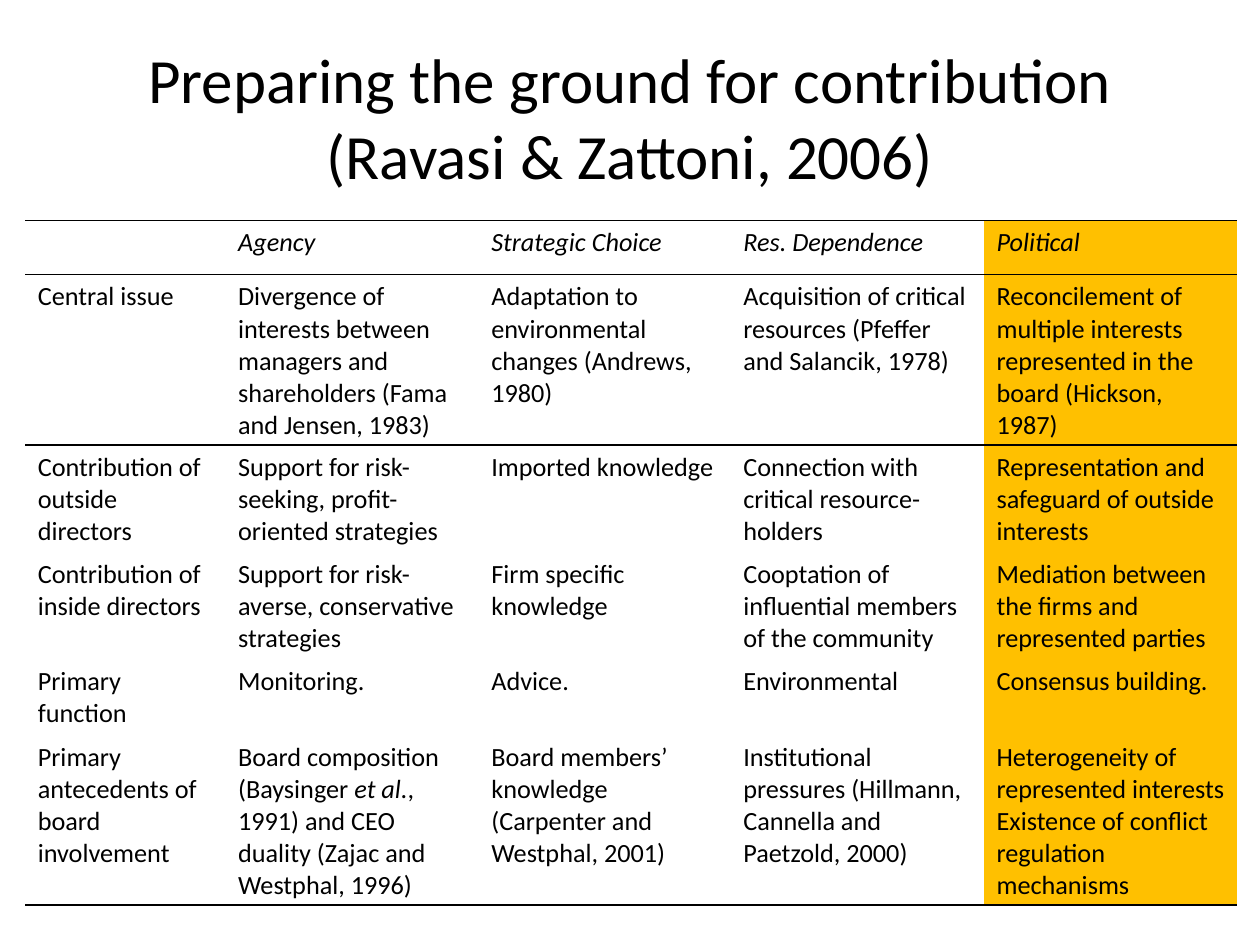
"""Build the slide comparing four theories of board contribution."""
from lxml import etree
from pptx import Presentation
from pptx.dml.color import RGBColor
from pptx.enum import text
from pptx.oxml import ns
from pptx.util import Inches, Pt

BLACK = RGBColor(0x00, 0x00, 0x00)
AMBER = RGBColor(0xFF, 0xC0, 0x00)
FONT = "Calibri"
NO_STYLE_NO_GRID = "{2D5ABB26-0587-4C30-8999-92F81FD0307C}"

COLUMN_WIDTHS = [1.59, 2.01, 2, 2.01, 2.01]
ROW_HEIGHTS = [0.43, 1.33, 0.84, 0.84, 0.59, 1.33]
# Asterisks enclose italic words; a line feed starts a new paragraph.
THEORIES = [
    ["", "*Agency*", "*Strategic Choice*", "*Res. Dependence*", "*Political*"],
    ["Central issue",
     "Divergence of interests between managers and shareholders (Fama and Jensen, 1983)",
     "Adaptation to environmental changes (Andrews, 1980)",
     "Acquisition of critical resources (Pfeffer and Salancik, 1978)",
     "Reconcilement of multiple interests represented in the board (Hickson, 1987)"],
    ["Contribution of outside directors",
     "Support for risk-seeking, profit-oriented strategies",
     "Imported knowledge",
     "Connection with critical resource-holders",
     "Representation and safeguard of outside interests"],
    ["Contribution of inside directors",
     "Support for risk-averse, conservative strategies",
     "Firm specific knowledge",
     "Cooptation of influential members of the community",
     "Mediation between the firms and represented parties"],
    ["Primary function", "Monitoring.", "Advice.", "Environmental", "Consensus building."],
    ["Primary antecedents of board involvement",
     "Board composition (Baysinger *et al.*, 1991) and CEO duality (Zajac and Westphal, 1996)",
     "Board members’ knowledge (Carpenter and Westphal, 2001)",
     "Institutional pressures (Hillmann, Cannella and Paetzold, 2000)",
     "Heterogeneity of represented interests\nExistence of conflict regulation mechanisms"],
]


def add_run(paragraph, words, size, italic=False):
    run = paragraph.add_run()
    run.text = words
    run.font.name = FONT
    run.font.size = Pt(size)
    run.font.italic = italic
    run.font.color.rgb = BLACK


def add_border(cell, side, position):
    line = etree.Element(ns.qn(f"a:ln{side}"), w=str(Pt(1)))
    fill = etree.SubElement(line, ns.qn("a:solidFill"))
    etree.SubElement(fill, ns.qn("a:srgbClr"), val=str(BLACK))
    cell._tc.get_or_add_tcPr().insert(position, line)


deck = Presentation()
deck.slide_width, deck.slide_height = Inches(10), Inches(7.5)
slide = deck.slides.add_slide(deck.slide_layouts[6])

title = slide.shapes.add_textbox(Inches(0.5), Inches(0.3), Inches(9), Inches(1.25)).text_frame
title.word_wrap = True
title.vertical_anchor = text.MSO_ANCHOR.MIDDLE
heading = title.paragraphs[0]
heading.alignment = text.PP_ALIGN.CENTER
add_run(heading, "Preparing the ground for contribution (Ravasi & Zattoni, 2006)", 36)

comparison = slide.shapes.add_table(
    len(ROW_HEIGHTS), len(COLUMN_WIDTHS), Inches(0.2), Inches(1.75),
    Inches(sum(COLUMN_WIDTHS)), Inches(sum(ROW_HEIGHTS))).table
comparison.first_row = comparison.horz_banding = False
comparison._tbl.tblPr.find(ns.qn("a:tableStyleId")).text = NO_STYLE_NO_GRID
for column, width in zip(comparison.columns, COLUMN_WIDTHS):
    column.width = Inches(width)
for row, height in zip(comparison.rows, ROW_HEIGHTS):
    row.height = Inches(height)

last_row = len(THEORIES) - 1
political = len(COLUMN_WIDTHS) - 1
for r, aspects in enumerate(THEORIES):
    for c, aspect in enumerate(aspects):
        cell = comparison.cell(r, c)
        if c == political:
            cell.fill.solid()
            cell.fill.fore_color.rgb = AMBER
        else:
            cell.fill.background()
        if r in (0, last_row):
            add_border(cell, "B", 0)
        if r in (0, 1):
            add_border(cell, "T", 0)
        for n, statement in enumerate(aspect.split("\n")):
            paragraph = cell.text_frame.add_paragraph() if n else cell.text_frame.paragraphs[0]
            if r == 0 or (r, c) == (1, 0):
                hanging = paragraph._p.get_or_add_pPr()
                hanging.set("marL", str(Inches(0.38)))
                hanging.set("indent", str(-Inches(0.38)))
            for part, words in enumerate(statement.split("*")):
                if words:
                    add_run(paragraph, words, 15, italic=part % 2 == 1)

deck.save("out.pptx")
